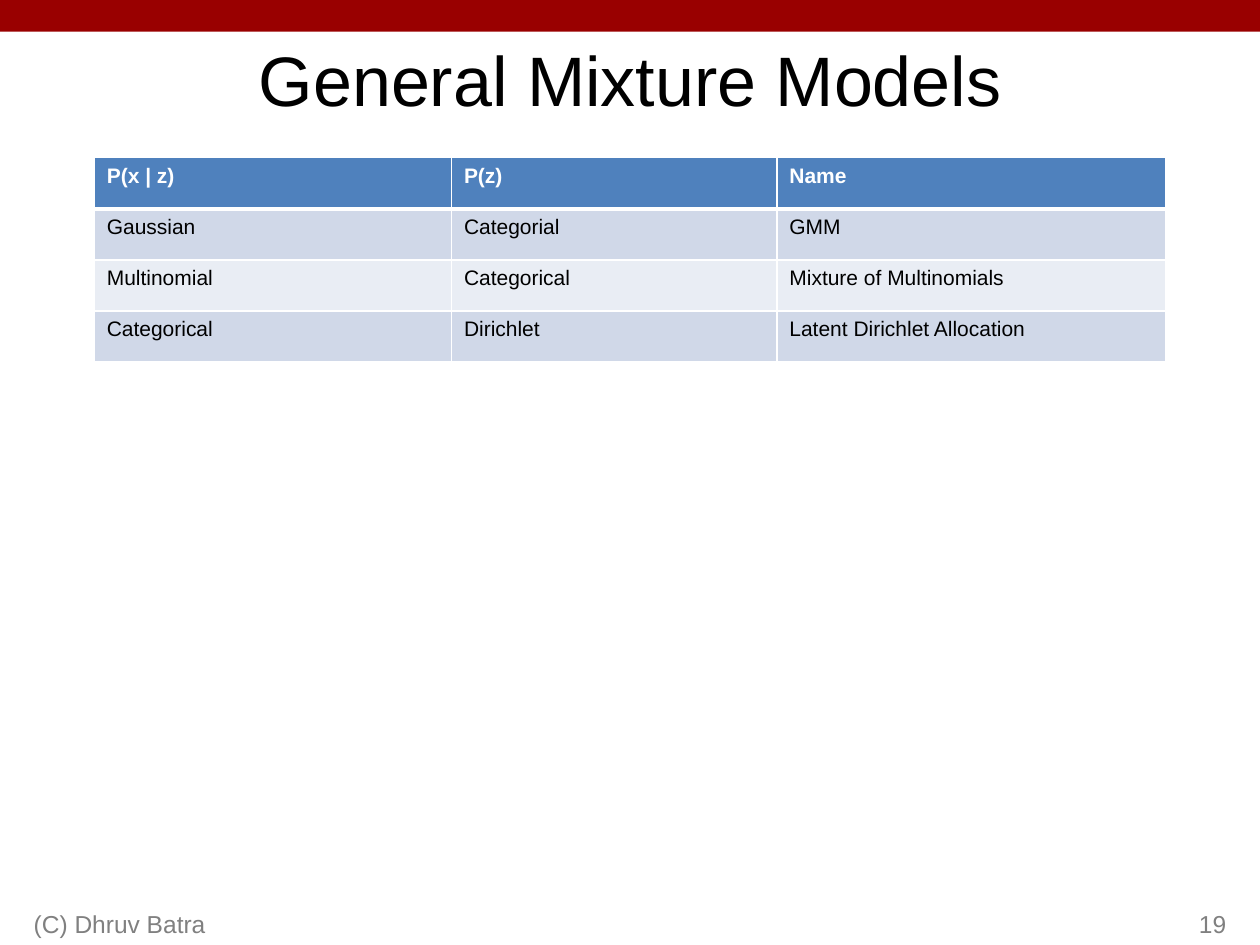
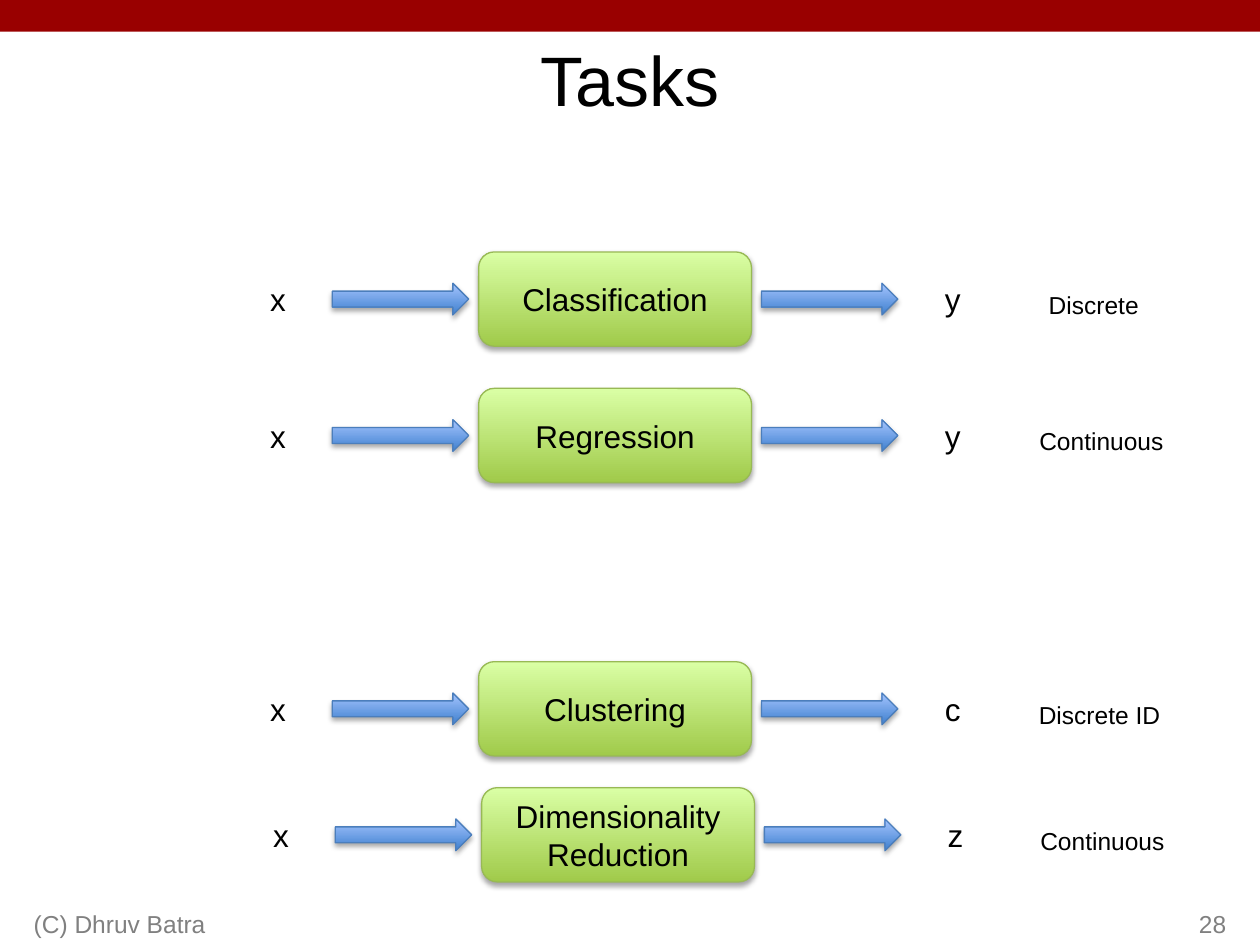
from dataclasses import dataclass

from lxml import etree
from pptx import Presentation
from pptx.dml.color import RGBColor
from pptx.enum.shapes import MSO_SHAPE
from pptx.enum.text import MSO_ANCHOR, PP_ALIGN
from pptx.oxml.ns import qn
from pptx.util import Cm, Pt

RECTANGLE = MSO_SHAPE.RECTANGLE
ROUNDED = MSO_SHAPE.ROUNDED_RECTANGLE
ARROW = MSO_SHAPE.RIGHT_ARROW
LEFT, CENTER, RIGHT = PP_ALIGN.LEFT, PP_ALIGN.CENTER, PP_ALIGN.RIGHT
TOP, MIDDLE, BOTTOM = MSO_ANCHOR.TOP, MSO_ANCHOR.MIDDLE, MSO_ANCHOR.BOTTOM

# Content
AUTHOR = "(C) Dhruv Batra"
MIXTURE_TITLE, MIXTURE_NUMBER = "General Mixture Models", "19"
MIXTURE_ROWS = [
    ("P(x | z)", "P(z)", "Name"),
    ("Gaussian", "Categorial", "GMM"),
    ("Multinomial", "Categorical", "Mixture of Multinomials"),
    ("Categorical", "Dirichlet", "Latent Dirichlet Allocation"),
]
TASKS_TITLE, TASKS_NUMBER = "Tasks", "28"
# top, shift to the right, input, task, output, note, note left, note width (cm)
TASKS = [
    (5.08, 0, "x", "Classification", "y", "Discrete", 20.88, 2.34),
    (7.83, 0, "x", "Regression", "y", "Continuous", 20.68, 3.05),
    (13.34, 0, "x", "Clustering", "c", "Discrete ID", 20.68, 2.97),
    (15.88, 0.06, "x", "Dimensionality\vReduction", "z", "Continuous", 20.7, 3.05),
]

# Layout in cm
SLIDE_WIDTH, SLIDE_HEIGHT = 25.4, 19.05
BAND_HEIGHT = 0.64
MARGIN, TITLE_HEIGHT = 1.9, 1.9
FOOTER_TOP, FOOTER_HEIGHT, FOOTER_MARGIN = 17.78, 1.27, 0.43
AUTHOR_WIDTH, NUMBER_WIDTH = 8.05, 5.28
TABLE_TOP, TABLE_ROW_HEIGHT = 3.18, 1.03
TABLE_COLUMNS = (7.2, 6.56, 7.83)
TASK_LEFT, TASK_WIDTH, TASK_HEIGHT = 9.65, 5.5, 1.9
ARROW_WIDTH, ARROW_HEIGHT, ARROW_GAP = 2.75, 0.64, 0.2
INPUT_LEFT, OUTPUT_LEFT, SYMBOL_WIDTH = 5.18, 18.78, 0.85
SYMBOL_HEIGHT, NOTE_HEIGHT = 1.02, 0.86


@dataclass(frozen=True)
class Theme:
    font: str = "Arial"
    title_size: int = 40
    label_size: int = 18
    small_size: int = 14
    table_size: int = 12
    band: str = "990000"
    text: str = "000000"
    footer: str = "808080"
    white: str = "FFFFFF"
    header: str = "4F81BD"
    stripes: tuple = ("D0D8E8", "E9EDF4")
    task_gradient: tuple = ("A0CA4A", "DAFFA5")
    task_line: str = "98B955"
    arrow_gradient: tuple = ("3F80CE", "A4C4FF")
    arrow_line: str = "4B7EBC"


THEME = Theme()


def rgb(color):
    return RGBColor.from_string(color)


def centimetres(*lengths):
    return [Cm(length) for length in lengths]


def write(frame, text, size, color=THEME.text, align=CENTER, anchor=MIDDLE, bold=False):
    frame.word_wrap = True
    frame.vertical_anchor = anchor
    paragraph = frame.paragraphs[0]
    paragraph.alignment = align
    for index, line in enumerate(text.split("\v")):
        if index:
            paragraph.add_line_break()
        run = paragraph.add_run()
        run.text = line
        run.font.name = THEME.font
        run.font.size = Pt(size)
        run.font.bold = bold
        run.font.color.rgb = rgb(color)


def add_text(slide, box, text, size, **style):
    shape = slide.shapes.add_textbox(*centimetres(*box))
    write(shape.text_frame, text, size, **style)


def add_shadow(shape):
    """Give the shape a soft shadow straight below it."""
    shape.shadow.inherit = False
    effects = shape._element.spPr.find(qn("a:effectLst"))
    shadow = etree.SubElement(effects, qn("a:outerShdw"), blurRad=str(Pt(3.1)),
                              dist=str(Pt(1.8)), dir="5400000", rotWithShape="0")
    color = etree.SubElement(shadow, qn("a:srgbClr"), val="000000")
    etree.SubElement(color, qn("a:alpha"), val="35000")


def add_gradient_shape(slide, kind, box, gradient, line):
    """Add a shape shaded from the first colour (bottom) to the second (top)."""
    shape = slide.shapes.add_shape(kind, *centimetres(*box))
    shape.fill.gradient()
    shape.fill.gradient_angle = 90
    for stop, color in zip(shape.fill.gradient_stops, gradient):
        stop.color.rgb = rgb(color)
    shape.line.color.rgb = rgb(line)
    shape.line.width = Pt(0.75)
    add_shadow(shape)
    return shape


def add_base_slide(presentation, title, number):
    """Add a blank slide with the band, title and footer."""
    slide = presentation.slides.add_slide(presentation.slide_layouts[6])
    band = slide.shapes.add_shape(RECTANGLE, *centimetres(0, 0, SLIDE_WIDTH, BAND_HEIGHT))
    band.shadow.inherit = False
    band.fill.solid()
    band.fill.fore_color.rgb = rgb(THEME.band)
    band.line.fill.background()
    add_text(slide, (MARGIN, BAND_HEIGHT, SLIDE_WIDTH - 2 * MARGIN, TITLE_HEIGHT),
             title, THEME.title_size)
    number_left = SLIDE_WIDTH - FOOTER_MARGIN - NUMBER_WIDTH
    for left, width, text, align in (
        (FOOTER_MARGIN, AUTHOR_WIDTH, AUTHOR, LEFT),
        (number_left, NUMBER_WIDTH, number, RIGHT),
    ):
        add_text(slide, (left, FOOTER_TOP, width, FOOTER_HEIGHT), text, THEME.small_size,
                 color=THEME.footer, align=align, anchor=BOTTOM)
    return slide


def set_borders(cell, top, bottom):
    properties = cell._tc.get_or_add_tcPr()
    for side, width in (("L", 1), ("R", 1), ("T", top), ("B", bottom)):
        line = etree.SubElement(properties, qn(f"a:ln{side}"), w=str(Pt(width)))
        fill = etree.SubElement(line, qn("a:solidFill"))
        etree.SubElement(fill, qn("a:srgbClr"), val=THEME.white)


def add_mixture_table(slide):
    box = (MARGIN, TABLE_TOP, sum(TABLE_COLUMNS), TABLE_ROW_HEIGHT * len(MIXTURE_ROWS))
    table = slide.shapes.add_table(len(MIXTURE_ROWS), len(TABLE_COLUMNS),
                                   *centimetres(*box)).table
    table.horz_banding = False
    for column, width in zip(table.columns, TABLE_COLUMNS):
        column.width = Cm(width)
    for row_index, texts in enumerate(MIXTURE_ROWS):
        is_header = row_index == 0
        fill = THEME.header if is_header else THEME.stripes[(row_index - 1) % 2]
        for column_index, text in enumerate(texts):
            cell = table.cell(row_index, column_index)
            set_borders(cell, top=3 if row_index == 1 else 1, bottom=3 if is_header else 1)
            cell.fill.solid()
            cell.fill.fore_color.rgb = rgb(fill)
            write(cell.text_frame, text, THEME.table_size, align=LEFT, anchor=TOP,
                  color=THEME.white if is_header else THEME.text, bold=is_header)


def add_task(slide, top, shift, source, task, result, note, note_left, note_width):
    """Add one row: input, arrow, task box, arrow, output and note."""
    middle = top + TASK_HEIGHT / 2
    task_left = TASK_LEFT + shift
    box = add_gradient_shape(slide, ROUNDED, (task_left, top, TASK_WIDTH, TASK_HEIGHT),
                             THEME.task_gradient, THEME.task_line)
    write(box.text_frame, task, THEME.label_size)
    for left in (task_left - ARROW_GAP - ARROW_WIDTH, task_left + TASK_WIDTH + ARROW_GAP):
        add_gradient_shape(slide, ARROW,
                           (left, middle - ARROW_HEIGHT / 2, ARROW_WIDTH, ARROW_HEIGHT),
                           THEME.arrow_gradient, THEME.arrow_line)
    for left, symbol in ((INPUT_LEFT, source), (OUTPUT_LEFT, result)):
        add_text(slide, (left + shift, middle - SYMBOL_HEIGHT / 2, SYMBOL_WIDTH, SYMBOL_HEIGHT),
                 symbol, THEME.label_size)
    note_top = middle - ARROW_HEIGHT / 2
    slide_note = (note_left, note_top, note_width, NOTE_HEIGHT)
    add_text(slide, slide_note, note, THEME.small_size)


def main():
    presentation = Presentation()
    presentation.slide_width, presentation.slide_height = centimetres(SLIDE_WIDTH, SLIDE_HEIGHT)
    add_mixture_table(add_base_slide(presentation, MIXTURE_TITLE, MIXTURE_NUMBER))
    tasks_slide = add_base_slide(presentation, TASKS_TITLE, TASKS_NUMBER)
    for task in TASKS:
        add_task(tasks_slide, *task)
    presentation.save("out.pptx")


if __name__ == "__main__":
    main()
